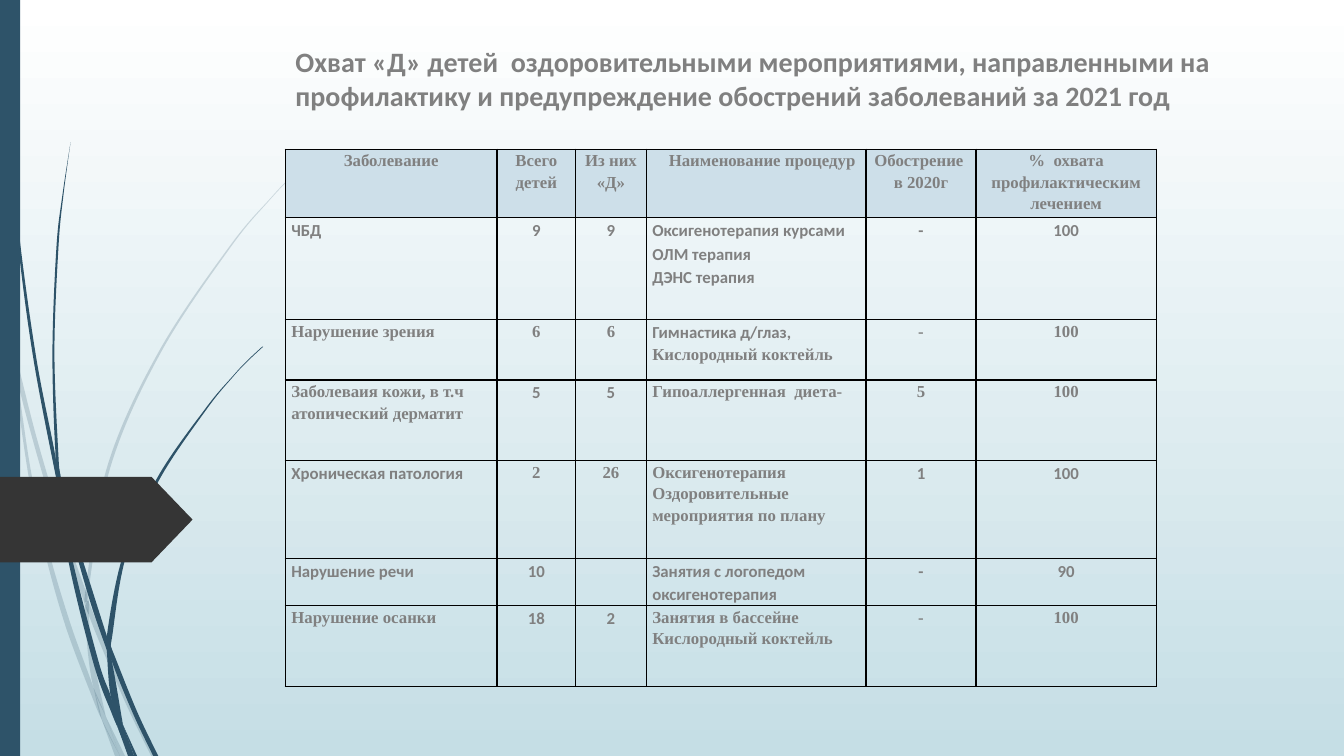
from lxml import etree
from pptx import Presentation
from pptx.dml import color
from pptx.enum import shapes, text
from pptx.oxml import ns
from pptx.util import Inches, Pt

COLORS = {"navy": "2E5369", "charcoal": "353535", "gray": "808080", "black": "000000",
          "header": "CDDFE9", "sky_top": "FFFFFF", "sky_bottom": "C5DEE5"}
FONTS = {"C": "Calibri", "T": "Times New Roman"}
TITLE = ("Охват «Д» детей  оздоровительными мероприятиями, направленными на "
         "профилактику и предупреждение обострений заболеваний за 2021 год")

# Each blade: right edge and left edge, both from tip to root.
PALE_BLADES = [
    ([(0, 2.82), (0.09, 3.22), (0.11, 3.5)], [(0, 2.99), (0.1, 3.44), (0.11, 3.5)]),
    ([(0.14, 3.45), (0.36, 4.33), (0.62, 5.2), (0.85, 5.86)],
     [(0.14, 3.45), (0.17, 3.76), (0.36, 4.49), (0.58, 5.22), (0.84, 5.99)]),
    ([(0.88, 5.96), (0.92, 6.07), (1.27, 6.92), (1.55, 7.5)],
     [(0.88, 5.96), (0.88, 6.1), (1.23, 6.94), (1.5, 7.5)]),
    ([(1.05, 7.11), (1.24, 7.5)], [(1.05, 7.11), (1.19, 7.5)]),
    ([(0.11, 3.5), (0.17, 3.76), (0.31, 4.69), (0.48, 5.45), (0.7, 6.19), (0.93, 6.83),
      (1.01, 7.14)],
     [(0.11, 3.5), (0.28, 4.7), (0.44, 5.46), (0.65, 6.21), (0.92, 6.93), (1.01, 7.14)]),
    ([(0.84, 5.99), (0.88, 6.1), (0.91, 6.46), (1.05, 7.11)],
     [(0.84, 5.99), (0.87, 6.46), (0.93, 6.83), (1.05, 7.11)]),
    ([(3.12, 1.54), (2.9, 1.75), (2.68, 1.98), (2.29, 2.45), (1.6, 3.49), (1.1, 4.62),
      (0.88, 5.84), (0.88, 5.96)],
     [(3.12, 1.53), (2.89, 1.75), (2.68, 1.97), (2.28, 2.44), (1.58, 3.48), (1.07, 4.61),
      (0.85, 5.84), (0.88, 5.96)]),
    ([(1.01, 7.14), (1.19, 7.5)], [(1.01, 7.14), (1.14, 7.5)]),
    ([(0.85, 5.86), (0.88, 5.96), (0.88, 6.1)], [(0.85, 5.86), (0.84, 5.99), (0.88, 6.1)]),
    ([(0.93, 6.83), (1.05, 7.11), (1.19, 7.5)], [(0.93, 6.83), (1.01, 7.14), (1.19, 7.5)]),
]
DARK_BLADES = [
    ([(0.04, 0), (0.05, 0.48), (0.08, 1.09), (0.19, 2.32), (0.36, 3.55), (0.55, 4.53),
      (0.57, 4.81)],
     [(0.03, 0), (0.04, 0.48), (0.07, 1.1), (0.17, 2.33), (0.33, 3.55), (0.57, 4.81)]),
    ([(0.6, 4.72), (0.75, 5.32), (0.93, 5.9), (1.06, 6.31)],
     [(0.6, 4.72), (0.64, 5.05), (0.88, 5.92), (1.06, 6.45)]),
    ([(1.1, 6.41), (1.13, 6.49), (1.36, 7.06), (1.57, 7.5)],
     [(1.1, 6.41), (1.11, 6.56), (1.32, 7.08), (1.52, 7.5)]),
    ([(0.57, 4.77), (0.64, 5.05), (0.72, 5.56), (0.98, 6.57), (1.1, 6.91), (1.17, 7.22)],
     [(0.57, 4.77), (0.68, 5.57), (0.93, 6.59), (1.11, 7.08), (1.17, 7.22)]),
    ([(0.7, 1.41), (0.63, 1.93), (0.58, 2.45), (0.54, 3.49), (0.58, 4.53), (0.6, 4.72)],
     [(0.7, 1.41), (0.62, 1.93), (0.56, 2.45), (0.52, 3.49), (0.55, 4.49), (0.6, 4.72)]),
    ([(1.22, 7.19), (1.36, 7.5)], [(1.22, 7.19), (1.33, 7.5)]),
    ([(0.55, 4.49), (0.6, 4.72), (0.64, 5.05)], [(0.55, 4.49), (0.57, 4.77), (0.64, 5.05)]),
    ([(2.61, 3.44), (2.45, 3.59), (2.31, 3.74), (2.05, 4.06), (1.58, 4.76), (1.25, 5.52),
      (1.11, 6.33), (1.1, 6.41)],
     [(2.6, 3.44), (2.45, 3.58), (2.31, 3.73), (2.04, 4.05), (1.56, 4.74), (1.22, 5.51),
      (1.06, 6.31), (1.1, 6.41)]),
    ([(1.17, 7.22), (1.31, 7.5)], [(1.17, 7.22), (1.27, 7.5)]),
    ([(1.06, 6.45), (1.11, 6.56), (1.22, 7.19)], [(1.06, 6.45), (1.1, 6.91), (1.22, 7.19)]),
    ([(1.06, 6.31), (1.1, 6.41), (1.11, 6.56)], [(1.06, 6.31), (1.06, 6.45), (1.11, 6.56)]),
    ([(1.1, 6.91), (1.22, 7.19), (1.33, 7.5)], [(1.1, 6.91), (1.17, 7.22), (1.3, 7.5)]),
]

COLUMNS = [2.1, 0.78, 0.7, 2.18, 1.09, 1.79]
LEFT_COLUMNS = (0, 3)
# Each row: height, font letter of every line in turn, cells.
ROWS = [
    (0.68, "TTTTTTTTTT", ["Заболевание", "Всего\nдетей", "Из них\n«Д»", "Наименование процедур",
                          "Обострение \nв 2020г", "%  охвата\nпрофилактическим лечением"]),
    (1.01, "CCCCCCCC", ["ЧБД", "9", "9", "Оксигенотерапия курсами\nОЛМ терапия\nДЭНС терапия",
                        "-", "100"]),
    (0.6, "TTTCTTT", ["Нарушение зрения", "6", "6", "Гимнастика д/глаз,\nКислородный коктейль",
                      "-", "100"]),
    (0.8, "TTCCTTT", ["Заболеваия кожи, в т.ч\nатопический дерматит", "5", "5",
                      "Гипоаллергенная  диета-", "5", "100"]),
    (0.97, "CTTTTCC", ["Хроническая патология", "2", "26",
                       "Оксигенотерапия\nОздоровительные мероприятия по плану", "1", "100"]),
    (0.45, "CCCCCCC", ["Нарушение речи", "10", "", "Занятия с логопедом\nоксигенотерапия",
                       "-", "90"]),
    (0.8, "TCCTTTT", ["Нарушение осанки", "18", "2", "Занятия в бассейне\nКислородный коктейль",
                      "-", "100"]),
]


def rgb(name):
    return color.RGBColor.from_string(COLORS[name])


def paint(shape, name, alpha=None):
    shape.shadow.inherit = False
    shape.line.fill.background()
    shape.fill.solid()
    shape.fill.fore_color.rgb = rgb(name)
    if alpha:
        tint = shape.fill._xPr.find(".//" + ns.qn("a:srgbClr"))
        etree.SubElement(tint, ns.qn("a:alpha")).set("val", str(alpha * 1000))


def add_run(para, words, font, size):
    span = para.add_run()
    span.text = words
    span.font.name, span.font.size, span.font.bold = font, Pt(size), True
    span.font.color.rgb = rgb("gray")


def edge_curves(knots):
    """Bezier control points of a Catmull-Rom curve, one pair per segment."""
    padded = [knots[0], *knots, knots[-1]]
    return [([q + (r - p) / 6 for p, q, r in zip(a, b, c)],
             [r - (s - q) / 6 for q, r, s in zip(b, c, d)])
            for a, b, c, d in zip(padded, padded[1:], padded[2:], padded[3:])]


def add_blade(page, left, top, right_edge, left_edge):
    right, back = ([(Inches(left + x), Inches(top + y)) for x, y in edge]
                   for edge in (right_edge, left_edge[::-1]))
    builder = page.shapes.build_freeform(*right[0])
    builder.add_line_segments(right[1:] + back)
    blade = builder.convert_to_shape()
    lines = list(blade.element.iter(ns.qn("a:lnTo")))
    for line, controls in zip(lines, edge_curves(right) + [None] + edge_curves(back)):
        if controls:
            line.tag = ns.qn("a:cubicBezTo")
            for index, (x, y) in enumerate(controls):
                point = etree.Element(ns.qn("a:pt"), x=str(round(x - blade.left)),
                                      y=str(round(y - blade.top)))
                line.insert(index, point)
    return blade


def add_side_decor(page, left, top, height):
    for blades, alpha in ((PALE_BLADES, 20), (DARK_BLADES, None)):
        for edges in blades:
            paint(add_blade(page, left, top, *edges), "navy", alpha)
    strip = page.shapes.add_shape(shapes.MSO_SHAPE.RECTANGLE, Inches(left), Inches(top),
                                  Inches(0.2), Inches(height))
    paint(strip, "navy")
    tag = page.shapes.add_shape(shapes.MSO_SHAPE.PENTAGON, Inches(left), Inches(top + 4.73),
                                Inches(1.91), Inches(0.85))
    tag.adjustments[0] = 0.48
    paint(tag, "charcoal")


def fill_title(page, left, top, width, height):
    box = page.shapes.title
    box.left, box.top, box.width, box.height = map(Inches, (left, top, width, height))
    frame = box.text_frame
    frame.word_wrap = True
    frame.auto_size = text.MSO_AUTO_SIZE.NONE
    frame.vertical_anchor = text.MSO_ANCHOR.BOTTOM
    para = frame.paragraphs[0]
    para.alignment = text.PP_ALIGN.LEFT
    add_run(para, TITLE, FONTS["C"], 20)


def add_borders(cell):
    properties = cell._tc.get_or_add_tcPr()
    for index, side in enumerate(("lnL", "lnR", "lnT", "lnB")):
        line = etree.Element(ns.qn("a:" + side), w=str(Pt(1)))
        fill = etree.SubElement(line, ns.qn("a:solidFill"))
        etree.SubElement(fill, ns.qn("a:srgbClr"), val=COLORS["black"])
        properties.insert(index, line)


def fill_cell(cell, words, fonts, centered):
    cell.margin_left = cell.margin_right = Inches(0.06)
    cell.margin_top = cell.margin_bottom = 0
    frame = cell.text_frame
    for index, line in enumerate(words.split("\n")):
        para = frame.add_paragraph() if index else frame.paragraphs[0]
        para.alignment = text.PP_ALIGN.CENTER if centered else text.PP_ALIGN.LEFT
        para.line_spacing = 1.15
        font = FONTS[next(fonts)]
        if line:
            add_run(para, line, font, 12)


def add_coverage_table(page, left, top):
    heights = [height for height, _, _ in ROWS]
    table = page.shapes.add_table(len(ROWS), len(COLUMNS), Inches(left), Inches(top),
                                  Inches(sum(COLUMNS)), Inches(sum(heights))).table
    table.first_row = table.horz_banding = False
    for column, width in zip(table.columns, COLUMNS):
        column.width = Inches(width)
    for r, (height, letters, entries) in enumerate(ROWS):
        table.rows[r].height = Inches(height)
        fonts = iter(letters)
        for c, words in enumerate(entries):
            cell = table.cell(r, c)
            fill_cell(cell, words, fonts, r == 0 or c not in LEFT_COLUMNS)
            if r == 0:
                cell.fill.solid()
                cell.fill.fore_color.rgb = rgb("header")
            else:
                cell.fill.background()
            add_borders(cell)
    table.cell(0, 3).margin_left = Inches(0.18)


def set_background(page):
    fill = page.background.fill
    fill.gradient()
    fill.gradient_angle = 270
    for stop, name, position in zip(fill.gradient_stops, ("sky_top", "sky_bottom"), (0, 1)):
        stop.color.rgb = rgb(name)
        stop.position = position


def main():
    deck = Presentation()
    deck.slide_width, deck.slide_height = Inches(13.33), Inches(7.5)
    page = deck.slides.add_slide(deck.slide_layouts[0])
    subtitle = page.placeholders[1].element
    subtitle.getparent().remove(subtitle)
    set_background(page)
    add_side_decor(page, 0, 0, 7.5)
    fill_title(page, 2.83, 0.31, 9.75, 0.85)
    add_coverage_table(page, 2.83, 1.48)
    deck.save("out.pptx")


if __name__ == "__main__":
    main()
